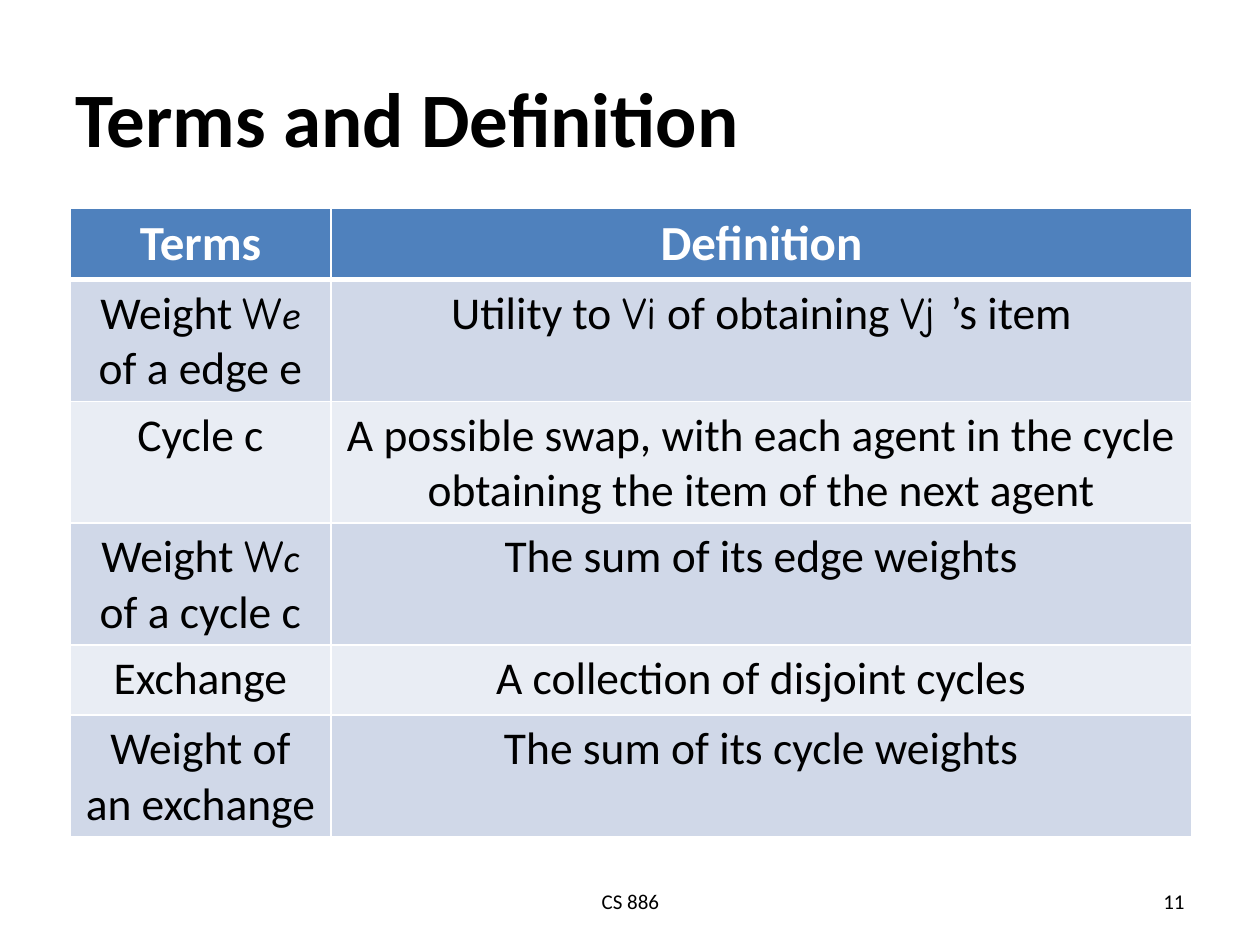
import pptx
import pptx.dml.color
import pptx.enum.text
import pptx.oxml
import pptx.oxml.ns
import pptx.util

SCALE = 914400 // 126
ALIGN = pptx.enum.text.PP_ALIGN
THEME = {
    "header_fill": "4F81BD",
    "bands": ("D0D8E8", "E9EDF4"),
    "rule": "FFFFFF",
    "title": {"name": "Calibri", "size": 44, "color": "000000", "bold": True},
    "footer": {"name": "Calibri", "size": 12, "color": "000000"},
    "header": {"name": "Calibri", "size": 28, "color": "FFFFFF", "bold": True},
    "body": {"name": "Calibri", "size": 26, "color": "000000", "bold": False},
    "symbol": {"name": "Comic Neue", "size": 26, "color": "000000", "bold": False},
    "subscript": {"name": "Calibri", "size": 22, "color": "000000", "bold": False, "italic": True},
}
HEADINGS = ("Terms", "Definition")
DEFINITIONS = (
    (
        (("Weight ", "body"), ("W", "symbol"), ("e", "subscript"), (" of a edge e", "body")),
        (("Utility to ", "body"), ("Vi", "symbol"), (" of obtaining ", "body"),
         ("Vj ", "symbol"), ("’s item", "body")),
    ),
    (
        "Cycle c",
        "A possible swap, with each agent in the cycle obtaining the item of the next agent",
    ),
    (
        (("Weight ", "body"), ("W", "symbol"), ("c", "subscript"), (" of a cycle c", "body")),
        "The sum of its edge weights",
    ),
    ("Exchange", "A collection of disjoint cycles"),
    ("Weight of an exchange", "The sum of its cycle weights"),
)
COLUMN_WIDTHS = (261, 861)
ROW_HEIGHTS = (70, 118, 118, 118, 70, 118)


def px(length):
    """Turn px into EMU."""
    return pptx.util.Emu(length * SCALE)


def rgb(code):
    """Turn a hex code into a colour."""
    return pptx.dml.color.RGBColor.from_string(code)


def write(frame, content, style, align):
    """Fill a frame with one paragraph of styled runs."""
    paragraph = frame.paragraphs[0]
    paragraph.alignment = align
    pieces = ((content, style),) if isinstance(content, str) else content
    for wording, role in pieces:
        run = paragraph.add_run()
        run.text = wording
        for key, setting in THEME[role].items():
            if key == "color":
                run.font.color.rgb = rgb(setting)
            else:
                setattr(run.font, key, pptx.util.Pt(setting) if key == "size" else setting)


def add_label(slide, box, content, style, align):
    """Place a vertically centred line of text in a box."""
    frame = slide.shapes.add_textbox(*map(px, box)).text_frame
    frame.word_wrap = True
    frame.vertical_anchor = pptx.enum.text.MSO_ANCHOR.MIDDLE
    write(frame, content, style, align)


def rule_cell(cell, bottom):
    """Draw the four borders of a cell, the lower one of the given weight."""
    properties = cell._tc.get_or_add_tcPr()
    for side, weight in (("L", 1), ("R", 1), ("T", 1), ("B", bottom)):
        properties.append(pptx.oxml.parse_xml(
            f'<a:ln{side} {pptx.oxml.ns.nsdecls("a")} w="{pptx.util.Pt(weight)}">'
            f'<a:solidFill><a:srgbClr val="{THEME["rule"]}"/></a:solidFill></a:ln{side}>'
        ))


def add_definitions(slide, left, top):
    """Place the table of terms with its top left corner at the given point."""
    rows = (HEADINGS,) + DEFINITIONS
    box = (left, top, sum(COLUMN_WIDTHS), sum(ROW_HEIGHTS))
    table = slide.shapes.add_table(len(rows), len(HEADINGS), *map(px, box)).table
    for column, width in zip(table.columns, COLUMN_WIDTHS):
        column.width = px(width)
    for index, (row, height, entries) in enumerate(zip(table.rows, ROW_HEIGHTS, rows)):
        row.height = px(height)
        is_header = index == 0
        fill = THEME["header_fill"] if is_header else THEME["bands"][(index - 1) % 2]
        for cell, entry in zip(row.cells, entries):
            rule_cell(cell, 3 if is_header else 1)
            if index == 1:
                cell._tc.tcPr.find(pptx.oxml.ns.qn("a:lnT")).set("w", str(pptx.util.Pt(3)))
            cell.fill.solid()
            cell.fill.fore_color.rgb = rgb(fill)
            write(cell.text_frame, entry, "header" if is_header else "body", ALIGN.CENTER)


def add_footer(slide, top, height):
    """Place the course name and the page number along the foot."""
    add_label(slide, (431, top, 399, height), "CS 886", "footer", ALIGN.CENTER)
    add_label(slide, (903, top, 294, height), "11", "footer", ALIGN.RIGHT)


def main():
    """Build and save the slide."""
    deck = pptx.Presentation()
    deck.slide_width, deck.slide_height = px(1260), px(945)
    slide = deck.slides.add_slide(deck.slide_layouts[6])
    add_label(slide, (63, 38, 1134, 158), "Terms and Definition", "title", ALIGN.LEFT)
    add_footer(slide, 876, 50)
    add_definitions(slide, 70, 208)
    deck.save("out.pptx")


if __name__ == "__main__":
    main()
